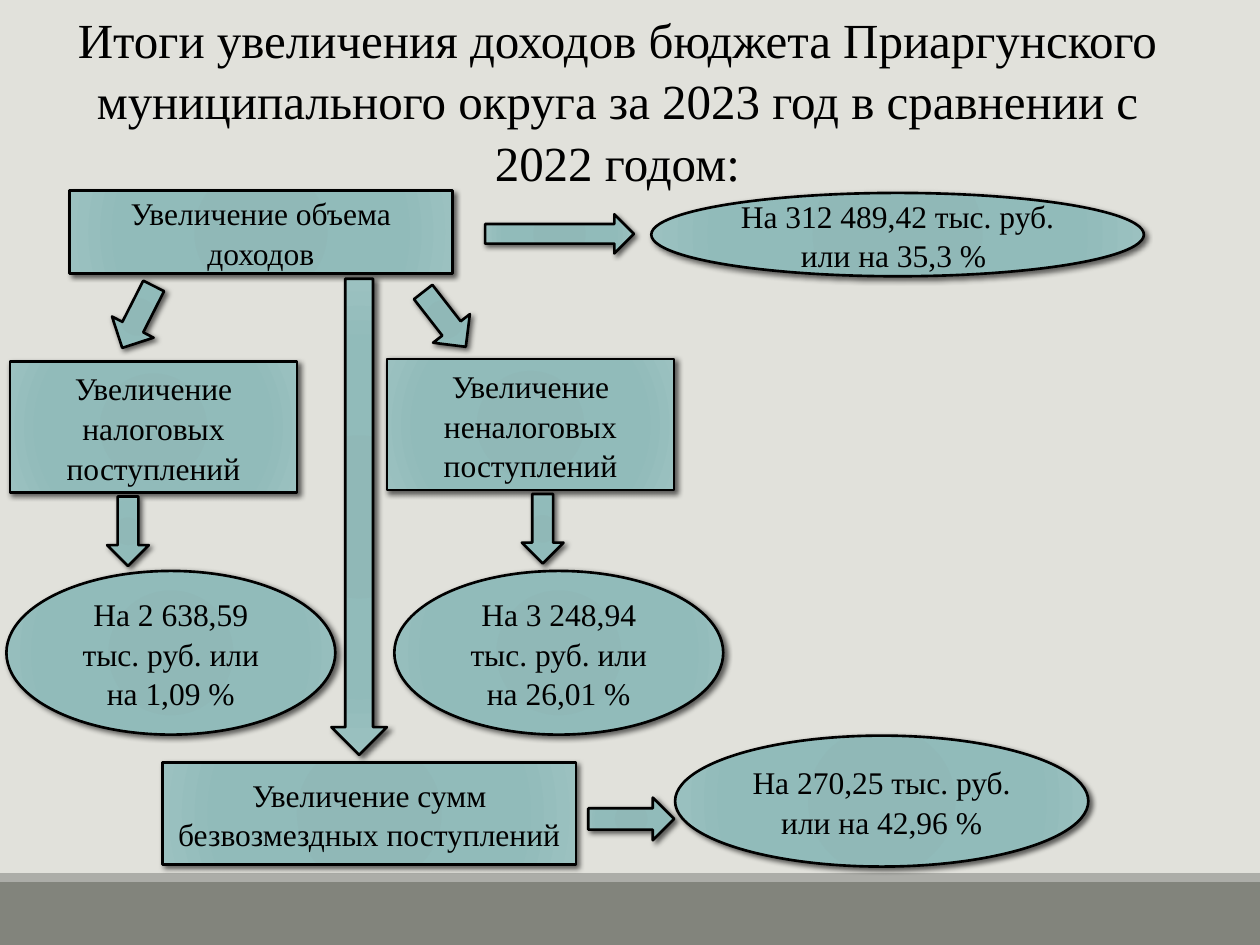
from dataclasses import dataclass

import lxml.etree
import pptx
import pptx.dml.color
import pptx.enum.shapes
import pptx.enum.text
import pptx.oxml.ns
import pptx.util

Cm = pptx.util.Cm
Kind = pptx.enum.shapes.MSO_SHAPE
qn = pptx.oxml.ns.qn

FONT = "Times New Roman"
BLACK = "000000"
GRADIENT = [(0, "8EB7B6"), (34, "90B8B7"), (70, "91BBBA"), (100, "9BC1C0")]


@dataclass
class Node:
    kind: Kind
    left: float
    top: float
    width: float
    height: float
    text: str


@dataclass
class Arrow:
    left: float
    top: float
    width: float
    height: float
    angle: float = 0


BOX, OVAL = Kind.RECTANGLE, Kind.OVAL
NODES = [
    Node(BOX, 1.4, 3.84, 7.72, 1.68, "Увеличение объема доходов"),
    Node(OVAL, 13.13, 3.89, 9.93, 1.68, "На 312 489,42 тыс. руб. или на 35,3 % "),
    Node(BOX, 0.2, 7.29, 5.79, 2.64, "Увеличение налоговых поступлений"),
    Node(OVAL, 0.13, 11.51, 6.63, 3.3, "На 2 638,59 тыс. руб. или на 1,09 %"),
    Node(BOX, 7.8, 7.24, 5.79, 2.64, "Увеличение неналоговых поступлений"),
    Node(OVAL, 7.95, 11.51, 6.63, 3.3, "На 3 248,94 тыс. руб. или на 26,01 %"),
    Node(BOX, 3.28, 15.37, 8.33, 2.06, "Увеличение сумм безвозмездных поступлений"),
    Node(OVAL, 13.61, 14.83, 8.33, 2.64, "На 270,25 тыс. руб. или на 42,96 %"),
]
ARROWS = [
    Arrow(9.78, 4.32, 3, 0.79),
    Arrow(2.08, 5.92, 1.4, 0.94, 116.9),
    Arrow(8.26, 5.97, 1.4, 0.94, 52.1),
    Arrow(1.88, 10.29, 1.4, 0.84, 90),
    Arrow(2.44, 9.86, 9.6, 1.12, 90),
    Arrow(10.24, 10.24, 1.4, 0.84, 90),
    Arrow(11.86, 16.08, 1.73, 0.86),
]


def color(value: str) -> pptx.dml.color.RGBColor:
    return pptx.dml.color.RGBColor.from_string(value)


def add_element(parent, tag: str, **attributes):
    element = lxml.etree.SubElement(parent, qn(tag))
    for name, value in attributes.items():
        element.set(name, str(value))
    return element


def add_color(parent, value: str):
    return add_element(parent, "a:srgbClr", val=value)


def style_text(frame, text: str, size: float) -> None:
    frame.word_wrap = True
    frame.text = text
    para = frame.paragraphs[0]
    para.alignment = pptx.enum.text.PP_ALIGN.CENTER
    para.line_spacing = 1.05
    span = para.runs[0]
    span.font.name = FONT
    span.font.size = pptx.util.Pt(size)
    span.font.color.rgb = color(BLACK)


def add_band(page, top: float, height: float, fill: str) -> None:
    """Draw a full-width stripe at the foot of the page."""
    band = page.shapes.add_shape(BOX, 0, Cm(top), Cm(25.4), Cm(height))
    band.shadow.inherit = False
    band.fill.solid()
    band.fill.fore_color.rgb = color(fill)
    band.line.fill.background()


def add_title(page, text: str) -> None:
    box = page.shapes.add_textbox(Cm(0.89), 0, Cm(23.11), Cm(3.84))
    style_text(box.text_frame, text, 28)
    box.text_frame.auto_size = pptx.enum.text.MSO_AUTO_SIZE.SHAPE_TO_FIT_TEXT


def add_glossy_shape(page, kind: Kind, item: Node | Arrow):
    """Add a shape with the radial fill, black outline and soft shadow."""
    shape = page.shapes.add_shape(
        kind, Cm(item.left), Cm(item.top), Cm(item.width), Cm(item.height))
    shape.line.color.rgb = color(BLACK)
    shape.line.width = pptx.util.Pt(1.5)

    properties = shape._element.spPr
    gradient = lxml.etree.Element(qn("a:gradFill"), rotWithShape="1")
    properties.find(qn("a:prstGeom")).addnext(gradient)
    stops = add_element(gradient, "a:gsLst")
    for position, value in GRADIENT:
        add_color(add_element(stops, "a:gs", pos=position * 1000), value)
    radial = add_element(gradient, "a:path", path="circle")
    add_element(radial, "a:fillToRect", **dict.fromkeys("ltrb", 100000))

    shape.shadow.inherit = False
    shadow = add_element(
        properties.find(qn("a:effectLst")), "a:outerShdw",
        blurRad=pptx.util.Pt(3), dist=pptx.util.Pt(2), dir=45 * 60000, rotWithShape=0)
    add_element(add_color(shadow, BLACK), "a:alpha", val=60000)
    return shape


def add_node(page, node: Node) -> None:
    shape = add_glossy_shape(page, node.kind, node)
    style_text(shape.text_frame, node.text, 18)
    shape.text_frame.vertical_anchor = pptx.enum.text.MSO_ANCHOR.MIDDLE


def add_arrow(page, arrow: Arrow) -> None:
    add_glossy_shape(page, Kind.RIGHT_ARROW, arrow).rotation = arrow.angle


def main() -> None:
    deck = pptx.Presentation()
    deck.slide_width, deck.slide_height = Cm(25.4), Cm(19.05)
    page = deck.slides.add_slide(deck.slide_layouts[6])
    page.background.fill.solid()
    page.background.fill.fore_color.rgb = color("E1E1DB")

    add_band(page, 17.78, 1.27, "82847C")
    add_band(page, 17.6, 0.18, "ACADA8")
    add_title(page, "Итоги увеличения доходов бюджета Приаргунского "
                    "муниципального округа за 2023 год в сравнении с 2022 годом:")
    for node in NODES:
        add_node(page, node)
    for arrow in ARROWS:
        add_arrow(page, arrow)
    deck.save("out.pptx")


if __name__ == "__main__":
    main()
